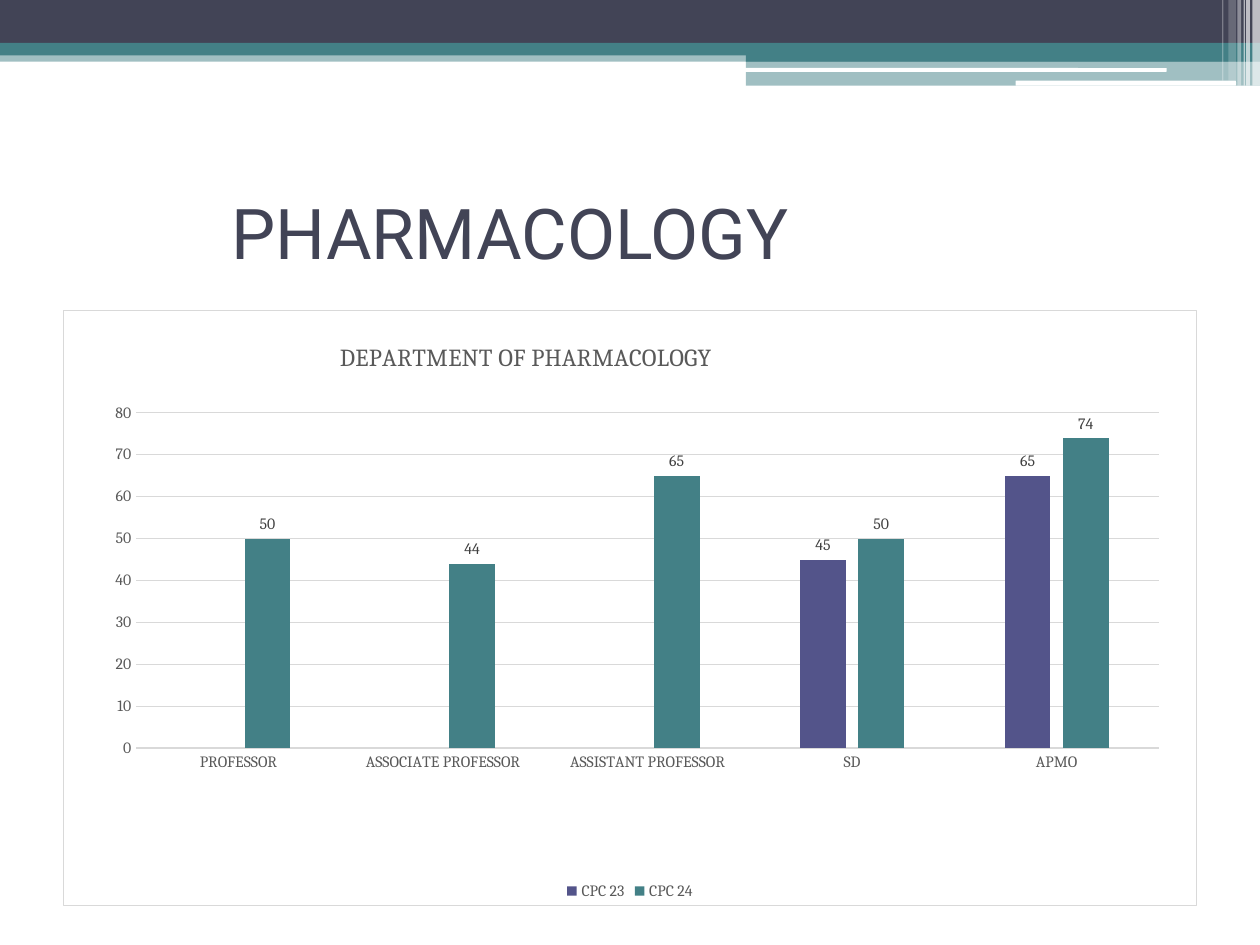
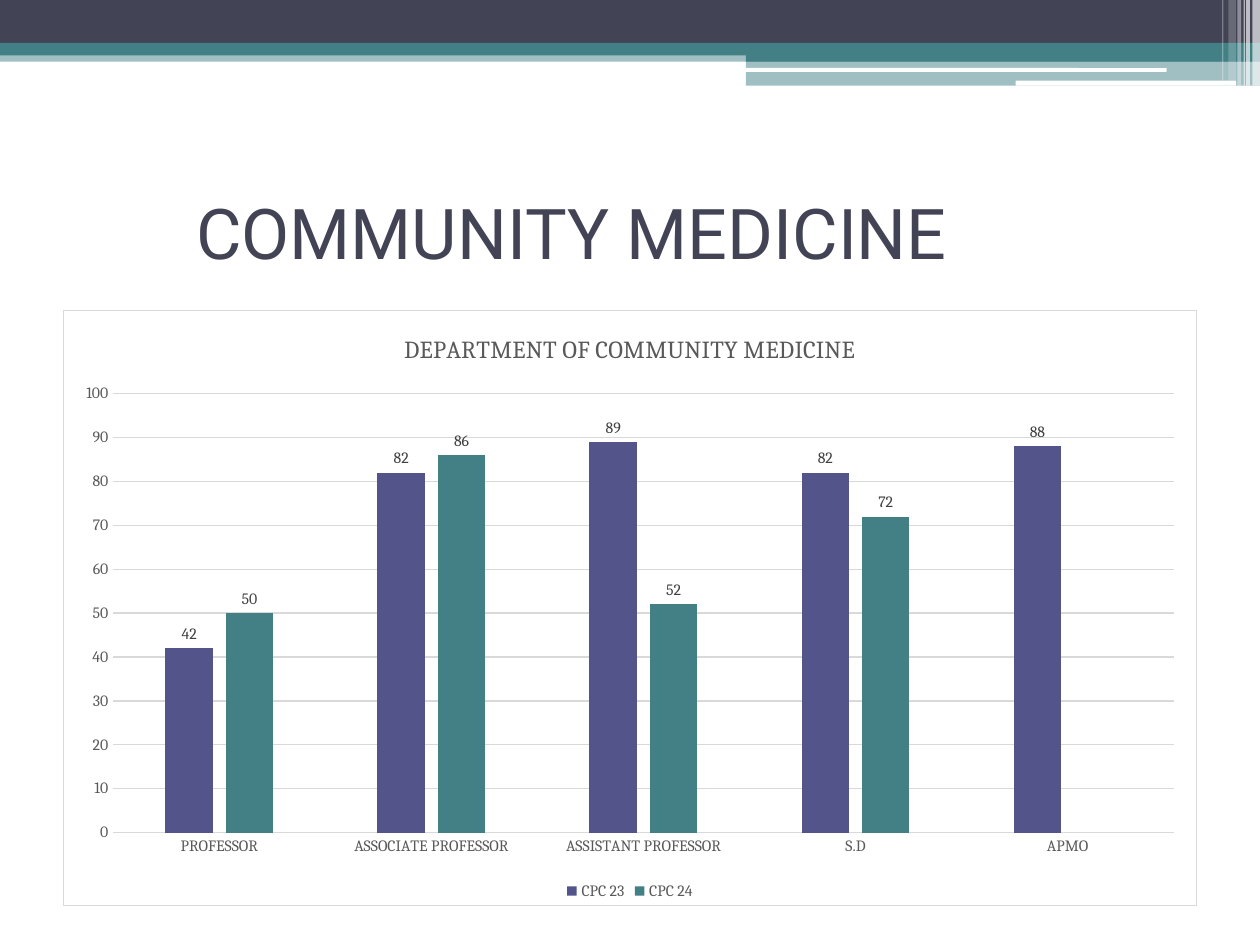
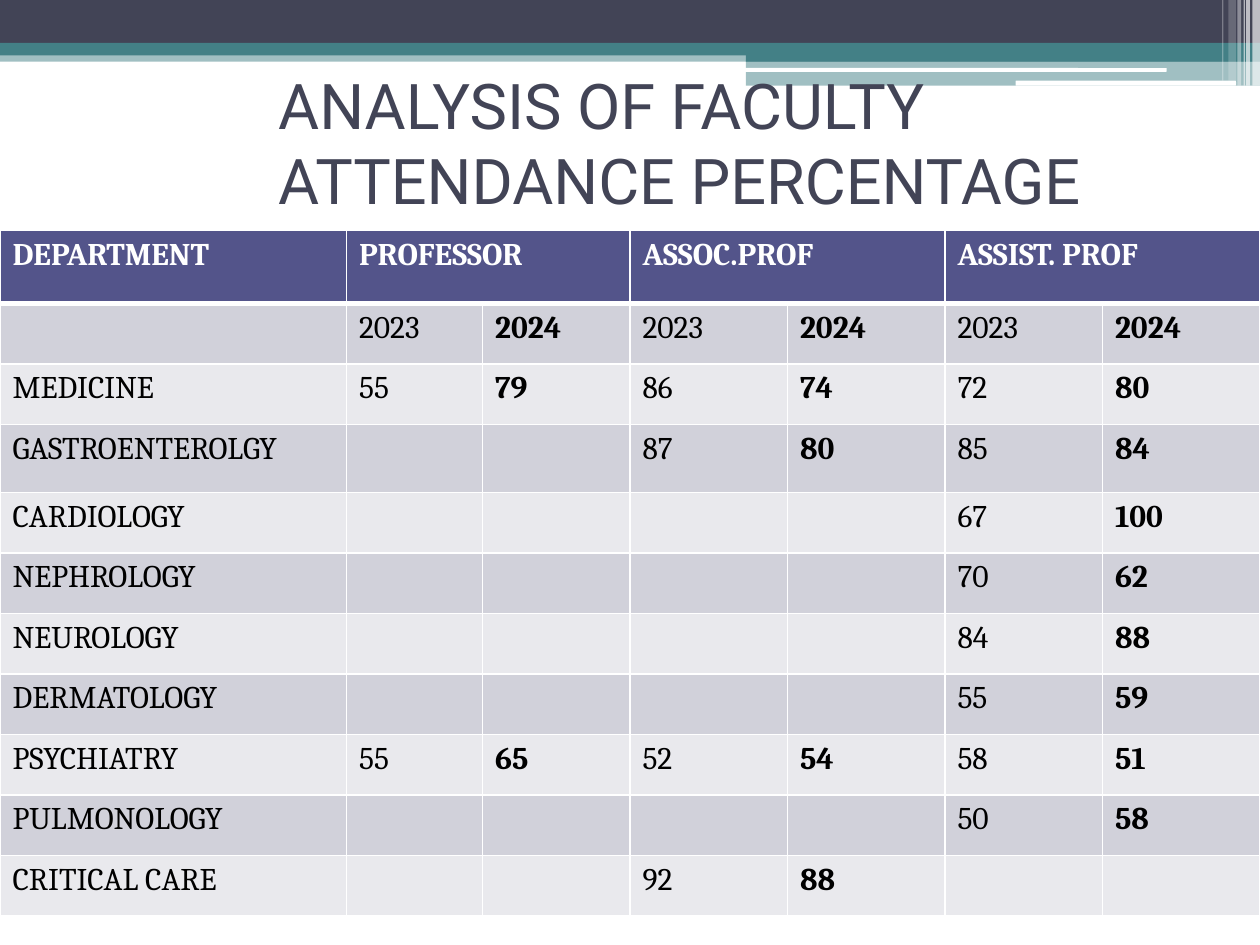
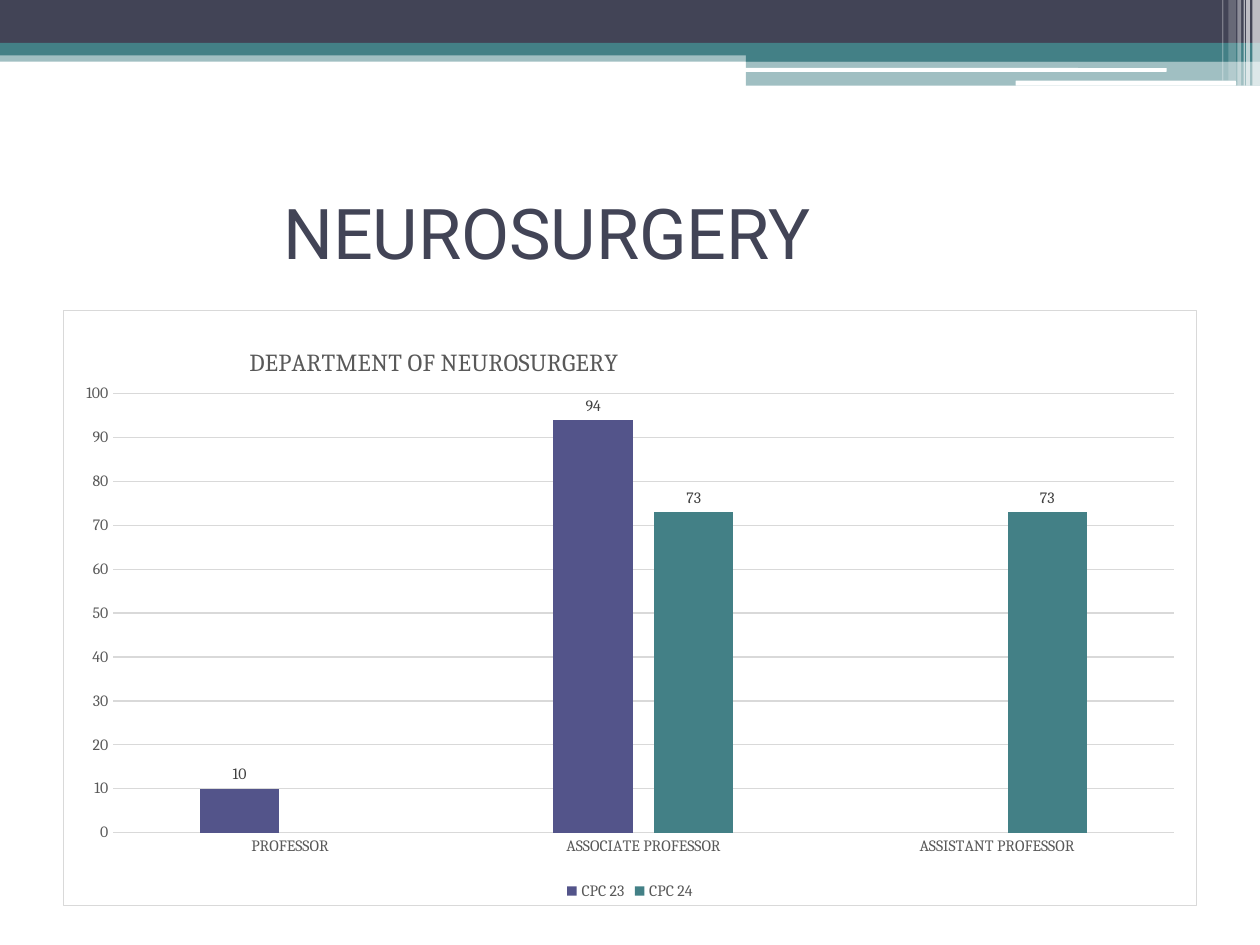
from lxml import etree
from pptx import Presentation
from pptx.chart.data import CategoryChartData
from pptx.dml.color import RGBColor
from pptx.enum.chart import XL_CHART_TYPE, XL_LABEL_POSITION, XL_LEGEND_POSITION, XL_TICK_MARK
from pptx.enum.shapes import MSO_SHAPE
from pptx.enum.text import MSO_ANCHOR
from pptx.oxml import parse_xml
from pptx.oxml.ns import nsdecls, qn
from pptx.util import Inches, Pt

RECT, ROUNDED = MSO_SHAPE.RECTANGLE, MSO_SHAPE.ROUNDED_RECTANGLE
COLUMNS = XL_CHART_TYPE.COLUMN_CLUSTERED
OUTSIDE_END = XL_LABEL_POSITION.OUTSIDE_END
BOTTOM = XL_LEGEND_POSITION.BOTTOM
NO_TICK = XL_TICK_MARK.NONE
MIDDLE = MSO_ANCHOR.MIDDLE

# Shared look
WIDTH, HEIGHT = 10, 7.5
MARGIN = 0.05 * WIDTH
INNER = WIDTH - 2 * MARGIN
NAVY, TEAL, VIOLET, WHITE, BLACK = "424456", "438086", "53548A", "FFFFFF", "000000"
GRID, GREY, LABEL = "D9D9D9", "595959", "404040"
STRIPES = ("D1D1DA", "E9E9ED")
HEAD_FONT, BODY_FONT = "Roboto", "Cambria"

# Top bands: left, top, width, height, colour, opacity in percent
SPLIT = 5.92
BANDS = [
    (0, 0.4, WIDTH, 0.09, TEAL, 50),
    (0, 0, WIDTH, 0.34, NAVY, 100),
    (0, 0.34, WIDTH, 0.1, TEAL, 100),
    (SPLIT, 0.39, WIDTH - SPLIT, 0.1, TEAL, 100),
    (SPLIT, 0.48, WIDTH - SPLIT, 0.2, TEAL, 50),
]
ROUNDED_BANDS = [(5.91, 0.54, 3.35, 0.03), (8.06, 0.64, 1.75, 0.04)]
# Upright stripes at the right: left, width, height, opacity
UPRIGHTS = [
    (9.94, 0.06, 0.68, 65), (9.89, 0.03, 0.68, 65), (9.87, 0.01, 0.68, 60),
    (9.82, 0.03, 0.68, 40), (9.75, 0.06, 0.64, 20), (9.7, 0.01, 0.64, 30),
]

# Chart slides
RANKS = ["PROFESSOR", "ASSOCIATE PROFESSOR", "ASSISTANT PROFESSOR"]
SERIES = [("CPC 23", VIOLET), ("CPC 24", TEAL)]
PHARMACOLOGY = dict(
    title="PHARMACOLOGY", indent=1.24, heading="DEPARTMENT OF PHARMACOLOGY",
    heading_at=(0.24, 0.045), plot_at=(0.064, 0.172, 0.903, 0.564),
    categories=RANKS + ["SD", "APMO"],
    values=[(None, None, None, 45, 65), (50, 44, 65, 50, 74)])
COMMUNITY = dict(
    title="COMMUNITY MEDICINE", indent=0.96, heading="DEPARTMENT OF COMMUNITY MEDICINE",
    categories=RANKS + ["S.D", "APMO"],
    values=[(42, 82, 89, 82, 88), (50, 86, 52, 72, None)])
NEUROSURGERY = dict(
    title="NEUROSURGERY", indent=1.65, heading="DEPARTMENT OF NEUROSURGERY",
    heading_at=(0.16, 0.052), categories=RANKS,
    values=[(10, 94, None), (None, 73, 73)])

# Attendance table: department, then 2023 and 2024 for each rank
ATTENDANCE_TITLE = "ANALYSIS OF FACULTY\vATTENDANCE PERCENTAGE"
HEADERS = ["DEPARTMENT", "PROFESSOR", "ASSOC.PROF", "ASSIST. PROF"]
BLANK = ("", "")
ATTENDANCE = [
    ("", *[("2023", "2024")] * 3),
    ("MEDICINE", (55, 79), (86, 74), (72, 80)),
    ("GASTROENTEROLGY", BLANK, (87, 80), (85, 84)),
    ("CARDIOLOGY", BLANK, BLANK, (67, 100)),
    ("NEPHROLOGY", BLANK, BLANK, (70, 62)),
    ("NEUROLOGY", BLANK, BLANK, (84, 88)),
    ("DERMATOLOGY", BLANK, BLANK, (55, 59)),
    ("PSYCHIATRY", (55, 65), (52, 54), (58, 51)),
    ("PULMONOLOGY", BLANK, BLANK, (50, 58)),
    ("CRITICAL CARE", BLANK, (92, 88), BLANK),
]
COLUMN_WIDTHS = [2.75, 1.08, 1.17] + [1.25] * 4
ROW_HEIGHT = 0.48
TALL_ROWS = {0: 0.58, 3: 0.54}


def rgb(color):
    return RGBColor.from_string(color)


def style_font(font, size, color, name=BODY_FONT, bold=False):
    font.size, font.name, font.bold = Pt(size), name, bold
    font.color.rgb = rgb(color)


def write(frame, text, size=18, color=BLACK, name=BODY_FONT, bold=False, indent=0):
    para = frame.paragraphs[0]
    para.text = str(text)
    if indent:
        para._p.get_or_add_pPr().set("marL", str(Inches(indent)))
    for span in para.runs:
        style_font(span.font, size, color, name, bold)


def add_band(page, left, top, width, height, color, opacity=100, kind=RECT):
    band = page.shapes.add_shape(kind, *map(Inches, (left, top, width, height)))
    band.shadow.inherit = False
    band.line.fill.background()
    band.fill.solid()
    band.fill.fore_color.rgb = rgb(color)
    if opacity < 100:
        tint = band.fill._xPr.find(".//" + qn("a:srgbClr"))
        etree.SubElement(tint, qn("a:alpha")).set("val", str(opacity * 1000))


def add_page(deck, title, indent, top=1.25, height=1.17, size=40):
    page = deck.slides.add_slide(deck.slide_layouts[6])
    for band in BANDS:
        add_band(page, *band)
    for band in ROUNDED_BANDS:
        add_band(page, *band, WHITE, kind=ROUNDED)
    for left, width, tall, opacity in UPRIGHTS:
        add_band(page, left, 0, width, tall, WHITE, opacity)
    box = page.shapes.add_textbox(*map(Inches, (MARGIN, top, INNER, height)))
    box.text_frame.word_wrap = True
    box.text_frame.vertical_anchor = MIDDLE
    write(box.text_frame, title, size, NAVY, HEAD_FONT, indent=indent)
    return page


def manual_layout(place, inner=False):
    """Chart layout from shares of the chart: x, y and, if given, w, h."""
    target = '<c:layoutTarget val="inner"/>' if inner else ""
    modes = '<c:xMode val="edge"/><c:yMode val="edge"/>'
    lengths = "".join(f'<c:{key} val="{share}"/>' for key, share in zip("xywh", place))
    return parse_xml(f'<c:layout {nsdecls("c")}><c:manualLayout>{target}{modes}{lengths}'
                     '</c:manualLayout></c:layout>')


def place_part(part, place, after=None, inner=False):
    for old in part.findall(qn("c:layout")):
        part.remove(old)
    layout = manual_layout(place, inner)
    if after is None:
        part.insert(0, layout)
    else:
        part.find(qn(after)).addnext(layout)


def style_chart(chart, heading):
    style_font(chart.font, 10, BLACK)
    chart._chartSpace.find(qn("c:chart")).addnext(parse_xml(
        f'<c:spPr {nsdecls("c", "a")}><a:solidFill><a:srgbClr val="{WHITE}"/></a:solidFill>'
        f'<a:ln w="{Pt(0.75)}"><a:solidFill><a:srgbClr val="{GRID}"/></a:solidFill></a:ln></c:spPr>'))
    chart.has_title = True
    write(chart.chart_title.text_frame, heading, 14, GREY)
    chart.chart_title.include_in_layout = False
    chart.has_legend = True
    chart.legend.position = BOTTOM
    chart.legend.include_in_layout = False
    style_font(chart.legend.font, 9, GREY)

    for axis in (chart.category_axis, chart.value_axis):
        axis.major_tick_mark = axis.minor_tick_mark = NO_TICK
        style_font(axis.tick_labels.font, 9, GREY)
    chart.value_axis.format.line.fill.background()
    for line in (chart.category_axis.format.line, chart.value_axis.major_gridlines.format.line):
        line.color.rgb = rgb(GRID)
        line.width = Pt(0.75)

    plot = chart.plots[0]
    plot.gap_width, plot.overlap, plot.vary_by_categories = 219, -27, False
    plot.has_data_labels = True
    plot.data_labels.show_value = True
    plot.data_labels.position = OUTSIDE_END
    style_font(plot.data_labels.font, 9, LABEL)
    for series, (_, color) in zip(plot.series, SERIES):
        series.format.fill.solid()
        series.format.fill.fore_color.rgb = rgb(color)


def chart_page(deck, title, indent, heading, categories, values, heading_at=None, plot_at=None):
    page = add_page(deck, title, indent)
    data = CategoryChartData()
    data.categories = categories
    for (name, _), numbers in zip(SERIES, values):
        data.add_series(name, numbers)
    place = map(Inches, (MARGIN, 2.46, INNER, 4.73))
    chart = page.shapes.add_chart(COLUMNS, *place, data).chart
    style_chart(chart, heading)
    if heading_at:
        place_part(chart.chart_title._element, heading_at, after="c:tx")
    if plot_at:
        place_part(chart._chartSpace.find(".//" + qn("c:plotArea")), plot_at, inner=True)


def style_cell(cell, fill, top=1, bottom=1):
    properties = cell._tc.get_or_add_tcPr()
    for side, points in (("L", 1), ("R", 1), ("T", top), ("B", bottom)):
        properties.append(parse_xml(
            f'<a:ln{side} {nsdecls("a")} w="{Pt(points)}"><a:solidFill>'
            f'<a:srgbClr val="{WHITE}"/></a:solidFill></a:ln{side}>'))
    cell.fill.solid()
    cell.fill.fore_color.rgb = rgb(fill)


def attendance_page(deck):
    page = add_page(deck, ATTENDANCE_TITLE, indent=1.61, top=0.5, height=1.25, size=36)
    heights = [TALL_ROWS.get(row, ROW_HEIGHT) for row in range(len(ATTENDANCE) + 1)]
    place = map(Inches, (0, 1.83, WIDTH, sum(heights)))
    table = page.shapes.add_table(len(heights), len(COLUMN_WIDTHS), *place).table
    table.first_row = table.horz_banding = False
    for column, width in zip(table.columns, COLUMN_WIDTHS):
        column.width = Inches(width)
    for row, height in zip(table.rows, heights):
        row.height = Inches(height)

    # Header row, each rank over its two years
    for cell in table.rows[0].cells:
        style_cell(cell, VIOLET, bottom=3)
    for index, header in enumerate(HEADERS):
        column = max(0, 2 * index - 1)
        if index:
            table.cell(0, column).merge(table.cell(0, column + 1))
        write(table.cell(0, column).text_frame, header, color=WHITE, bold=True)

    # Departments, the later year in bold
    for row, (department, *pairs) in enumerate(ATTENDANCE, start=1):
        texts = [department] + [value for pair in pairs for value in pair]
        for column, text in enumerate(texts):
            cell = table.cell(row, column)
            style_cell(cell, STRIPES[(row - 1) % 2], top=3 if row == 1 else 1)
            write(cell.text_frame, text, bold=column > 0 and column % 2 == 0)


def main():
    deck = Presentation()
    deck.slide_width, deck.slide_height = Inches(WIDTH), Inches(HEIGHT)
    chart_page(deck, **PHARMACOLOGY)
    chart_page(deck, **COMMUNITY)
    attendance_page(deck)
    chart_page(deck, **NEUROSURGERY)
    deck.save("out.pptx")


if __name__ == "__main__":
    main()
